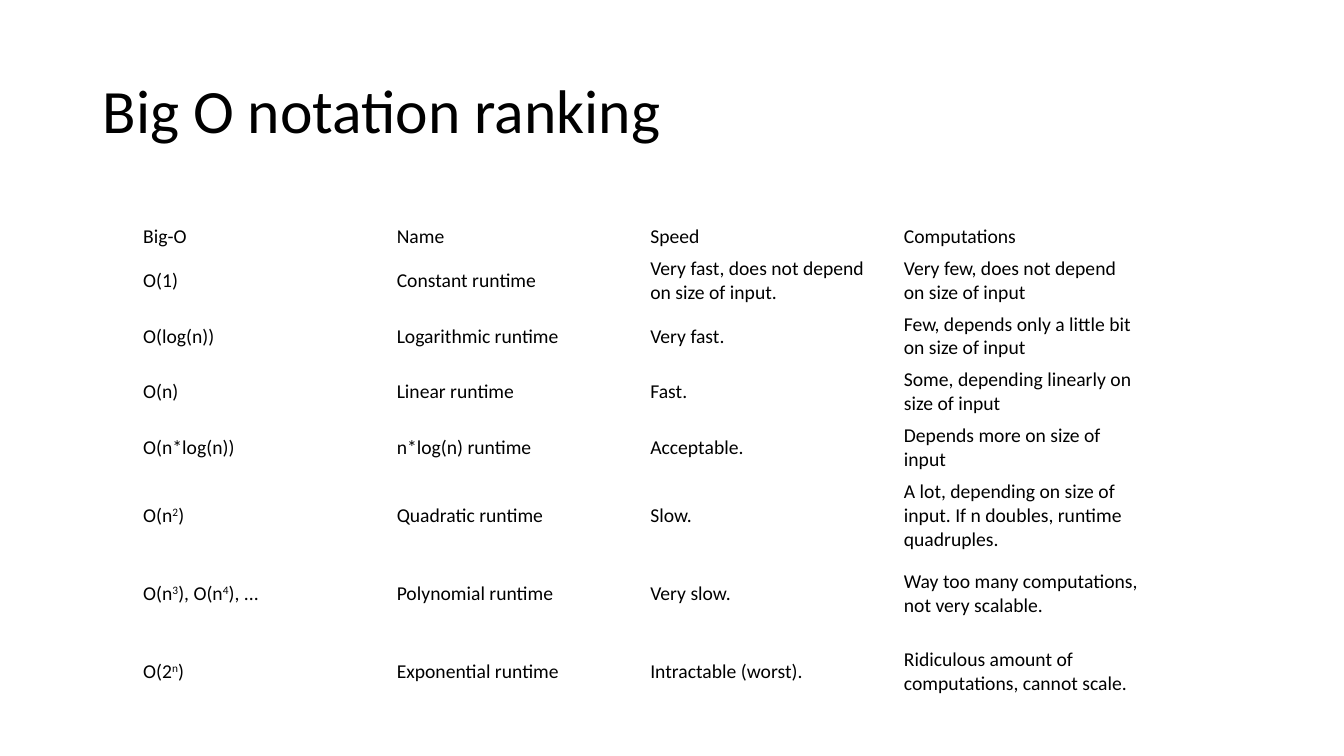
from pptx import Presentation
from pptx.dml.color import RGBColor
from pptx.enum.text import MSO_ANCHOR, PP_ALIGN
from pptx.util import Inches, Pt

MIDDLE = MSO_ANCHOR.MIDDLE
LEFT = PP_ALIGN.LEFT
TITLE_ONLY = 5
FONT = "Calibri"
COLOURS = {"text": "000000", "background": "FFFFFF"}
SUPERSCRIPT_MARK = "^"

RANKING = [
    ("Big-O", "Name", "Speed", "Computations"),
    ("O(1)", "Constant runtime", "Very fast, does not depend on size of input.",
     "Very few, does not depend on size of input"),
    ("O(log(n))", "Logarithmic runtime", "Very fast.",
     "Few, depends only a little bit on size of input"),
    ("O(n)", "Linear runtime", "Fast.", "Some, depending linearly on size of input"),
    ("O(n*log(n))", "n*log(n) runtime", "Acceptable.", "Depends more on size of input"),
    ("O(n^2^)", "Quadratic runtime", "Slow.",
     "A lot, depending on size of input. If n doubles, runtime quadruples."),
    ("O(n^3^), O(n^4^), ...", "Polynomial runtime", "Very slow.",
     "Way too many computations, not very scalable."),
    ("O(2^n^)", "Exponential runtime", "Intractable (worst).",
     "Ridiculous amount of computations, cannot scale."),
]
ROW_HEIGHTS = [0.31] + [0.55] * 4 + [0.77] * 3


def format_run(run, size):
    """Give a run the slide's font and colour at the given size."""
    run.font.name = FONT
    run.font.size = Pt(size)
    run.font.color.rgb = RGBColor.from_string(COLOURS["text"])


def add_title(slide, left, top, width, height):
    """Place the heading in the title placeholder."""
    heading = slide.shapes.title
    heading.left, heading.top = Inches(left), Inches(top)
    heading.width, heading.height = Inches(width), Inches(height)
    heading.text_frame.text = "Big O notation ranking"
    heading.text_frame.vertical_anchor = MIDDLE
    paragraph = heading.text_frame.paragraphs[0]
    paragraph.alignment = LEFT
    paragraph.line_spacing = 0.9
    format_run(paragraph.runs[0], 44)


def fill_cell(cell, wording):
    """Write wording in a cell, raising the parts between marks."""
    cell.fill.solid()
    cell.fill.fore_color.rgb = RGBColor.from_string(COLOURS["background"])
    cell.vertical_anchor = MIDDLE
    cell.margin_left = cell.margin_right = Inches(0.08)
    cell.margin_top = cell.margin_bottom = Inches(0.04)
    paragraph = cell.text_frame.paragraphs[0]
    for index, part in enumerate(wording.split(SUPERSCRIPT_MARK)):
        run = paragraph.add_run()
        run.text = part
        format_run(run, 14)
        if index % 2:
            run._r.get_or_add_rPr().set("baseline", "30000")


def add_ranking(slide, left, top, width):
    """Place the runtime table with equal columns."""
    column_count = len(RANKING[0])
    ranking = slide.shapes.add_table(
        len(RANKING), column_count, Inches(left), Inches(top),
        Inches(width), Inches(sum(ROW_HEIGHTS))).table
    ranking.first_row = False
    ranking.horz_banding = False
    for column in ranking.columns:
        column.width = Inches(width / column_count)
    for row, height, entries in zip(ranking.rows, ROW_HEIGHTS, RANKING):
        row.height = Inches(height)
        for cell, wording in zip(row.cells, entries):
            fill_cell(cell, wording)


def main():
    """Build and save the slide."""
    presentation = Presentation()
    presentation.slide_width = Inches(13.33)
    presentation.slide_height = Inches(7.5)
    slide = presentation.slides.add_slide(presentation.slide_layouts[TITLE_ONLY])
    add_title(slide, 0.92, 0.4, 11.5, 1.45)
    add_ranking(slide, 1.34, 2.19, 10.06)
    presentation.save("out.pptx")


if __name__ == "__main__":
    main()
